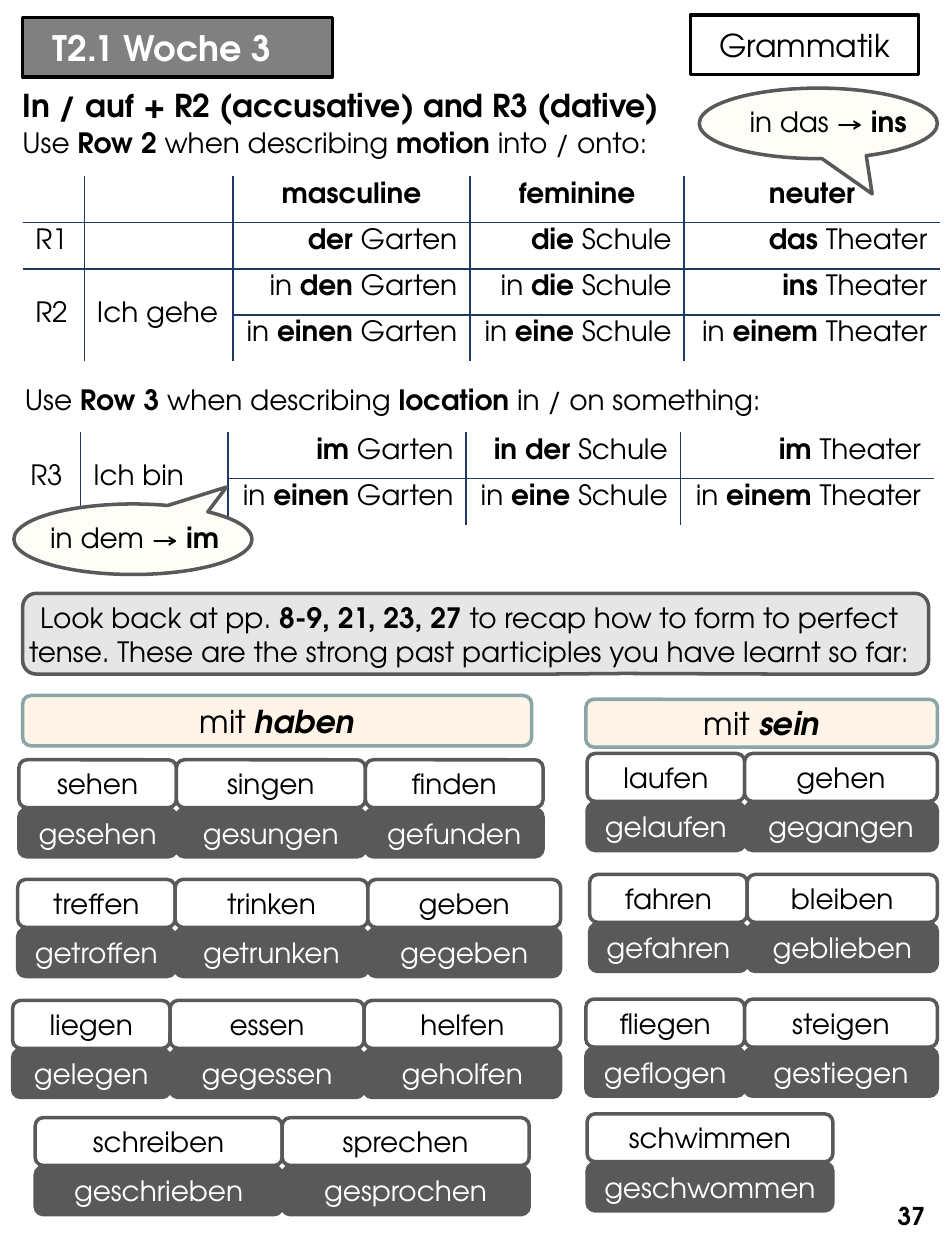
from lxml.etree import SubElement
from pptx import Presentation
from pptx.dml.color import RGBColor
from pptx.enum.shapes import MSO_SHAPE
from pptx.enum.text import MSO_ANCHOR, PP_ALIGN
from pptx.oxml.ns import qn
from pptx.util import Inches, Pt

FONT = "TeX Gyre Adventor"
BLACK, WHITE, DARK, NAVY = "000000", "FFFFFF", "595959", "203864"
CREAM, PEACH, TEAL = "FFFDF7", "FFF4E7", "8AA6A8"
LEFT, CENTER, RIGHT = PP_ALIGN.LEFT, PP_ALIGN.CENTER, PP_ALIGN.RIGHT
NO_GRID = "{2D5ABB26-0587-4C30-8999-92F81FD0307C}"
ROW_H, CARD_H, CARD_STEP = 0.367, 0.38, 0.39

# Text between asterisks is bold.
# left, top, width, height, text, size, alignment
TEXTS = [
    (5.69, 9.48, 1.75, 0.4, "*37*", 14, RIGHT),
    (0.08, 0.63, 7.11, 0.4, "*In / auf + R2 (accusative) and R3 (dative)*", 18, LEFT),
    (0.08, 4.72, 7.29, 0.64, "Look back at pp. *8-9, 21, 23, 27 *to recap how to form to perfect "
     "tense. These are the strong past participles you have learnt so far:", 16, CENTER),
    (0.08, 0.95, 7.36, 0.37, "Use *Row 2 *when describing *motion *into / onto:", 16, LEFT),
    (0.1, 2.99, 7.36, 0.37, "Use *Row 3 *when describing *location *in / on something:", 16, LEFT),
]
# left, top, pointer adjustments, text left, text
BUBBLES = [
    (0.11, 4, (0.393, -0.74), 0.3, "in dem → *im*"),
    (5.55, 0.7, (0.226, 0.999), 5.85, "in das → *ins*"),
]
# left, top, column widths, number of rows above the merged pair, cells
TABLES = [
    (0.18, 1.4, (0.49, 1.18, 1.88, 1.7, 2.03), 2, [
        ("", "", "*masculine*", "*feminine*", "*neuter*"),
        ("R1", "", "*der* Garten", "*die* Schule", "*das *Theater"),
        ("R2", "Ich gehe", "in *den* Garten", "in *die* Schule", "*ins *Theater"),
        ("", "", "in *einen* Garten", "in *eine* Schule", "in *einem *Theater"),
    ]),
    (0.14, 3.43, (0.5, 1.17, 1.89, 1.7, 2.01), 0, [
        ("R3", "Ich bin", "*im* Garten", "*in der* Schule", "*im *Theater"),
        ("", "", "in *einen* Garten", "in *eine* Schule", "in *einem *Theater"),
    ]),
]
# left, top, width, height, text
HEADINGS = [(0.18, 5.52, 4.04, 0.4, "mit *haben*"), (4.65, 5.55, 2.79, 0.38, "mit *sein*")]
# left, top, then (width, infinitive, participle) for each card, side by side
VERB_ROWS = [
    (0.15, 6.03, [(1.25, "sehen", "gesehen"), (1.5, "singen", "gesungen"),
                  (1.41, "finden", "gefunden")]),
    (0.14, 6.98, [(1.25, "treffen", "getroffen"), (1.53, "trinken", "getrunken"),
                  (1.53, "geben", "gegeben")]),
    (0.1, 7.94, [(1.25, "liegen", "gelegen"), (1.54, "essen", "gegessen"),
                 (1.56, "helfen", "geholfen")]),
    (0.28, 8.87, [(1.96, "schreiben", "geschrieben"), (1.96, "sprechen", "gesprochen")]),
    (4.66, 5.98, [(1.25, "laufen", "gelaufen"), (1.53, "gehen", "gegangen")]),
    (4.68, 6.94, [(1.25, "fahren", "gefahren"), (1.51, "bleiben", "geblieben")]),
    (4.65, 7.93, [(1.26, "fliegen", "geflogen"), (1.53, "steigen", "gestiegen")]),
    (4.66, 8.84, [(1.95, "schwimmen", "geschwommen")]),
]


def rgb(color):
    return RGBColor.from_string(color)


def write(tf, text, size=16, color=BLACK, align=LEFT, italic=False):
    """Fill a text frame; parts between asterisks are bold, and italic on request."""
    p = tf.paragraphs[0]
    p.alignment = align
    p.font.size = Pt(size)
    for i, part in enumerate(text.split("*")):
        if part:
            r = p.add_run()
            r.text = part
            bold = i % 2 == 1
            fmt = {"name": FONT, "size": Pt(size), "bold": bold, "italic": bold and italic}
            for name, value in fmt.items():
                setattr(r.font, name, value)
            r.font.color.rgb = rgb(color)


def add_text(s, x, y, w, h, text, size=16, align=LEFT, color=BLACK, anchor=MSO_ANCHOR.TOP):
    tf = s.shapes.add_textbox(*map(Inches, (x, y, w, h))).text_frame
    tf.word_wrap = True
    tf.vertical_anchor = anchor
    write(tf, text, size, color, align)


def add_box(s, kind, x, y, w, h, fill, line, text="", size=16, color=BLACK, adj=(), italic=False):
    sp = s.shapes.add_shape(kind, *map(Inches, (x, y, w, h)))
    sp.shadow.inherit = False
    sp.fill.solid()
    sp.fill.fore_color.rgb = rgb(fill)
    sp.line.color.rgb = rgb(line)
    sp.line.width = Pt(2)
    for i, value in enumerate(adj):
        sp.adjustments[i] = value
    tf = sp.text_frame
    tf.margin_left = tf.margin_right = Inches(0.05)
    tf.vertical_anchor = MSO_ANCHOR.MIDDLE
    write(tf, text, size, color, CENTER, italic)


def set_borders(cell, sides):
    tc_pr = cell._tc.get_or_add_tcPr()
    for side in "LRTB":
        ln = SubElement(tc_pr, qn("a:ln" + side), w=str(Pt(1)))
        if side in sides:
            SubElement(SubElement(ln, qn("a:solidFill")), qn("a:srgbClr"), val=NAVY)
        else:
            SubElement(ln, qn("a:noFill"))


def add_grid(s, x, y, widths, pair, rows):
    """Table ruled only between cells; the first two columns merge the last two rows."""
    n, m = len(rows), len(widths)
    frame = s.shapes.add_table(n, m, *map(Inches, (x, y, sum(widths), n * ROW_H)))
    tbl = frame.table
    tbl.first_row = tbl.horz_banding = False
    tbl._tbl.tblPr.find(qn("a:tableStyleId")).text = NO_GRID
    for col, w in zip(tbl.columns, widths):
        col.width = Inches(w)
    for c in (0, 1):
        tbl.cell(pair, c).merge(tbl.cell(pair + 1, c))
    for i, row in enumerate(rows):
        tbl.rows[i].height = Inches(ROW_H)
        for j, text in enumerate(row):
            cell = tbl.cell(i, j)
            merged = j < 2
            shown = {"L": j > 0, "R": j < m - 1,
                     "T": i > 0 and not (merged and i == pair + 1),
                     "B": i < n - 1 and not (merged and i == pair)}
            set_borders(cell, [side for side, on in shown.items() if on])
            cell.fill.background()
            if merged and i == pair:
                cell.vertical_anchor = MSO_ANCHOR.MIDDLE
            heading = text.startswith("*") and text.endswith("*")
            write(cell.text_frame, text, align=LEFT if merged else CENTER if heading else RIGHT)


def main():
    prs = Presentation()
    prs.slide_width, prs.slide_height = Inches(7.5), Inches(10)
    s = prs.slides.add_slide(prs.slide_layouts[6])

    add_box(s, MSO_SHAPE.ROUNDED_RECTANGULAR_CALLOUT, 0.18, 4.71, 7.19, 0.64, "E6E6E6", DARK,
            adj=(0.164, 0.493, 0.167))
    add_box(s, MSO_SHAPE.RECTANGLE, 0.18, 0.14, 2.46, 0.47, "808080", BLACK)
    add_text(s, 0.32, 0.11, 2.32, 0.53, "*T2.1 Woche 3*", 20, color=WHITE,
             anchor=MSO_ANCHOR.MIDDLE)
    add_box(s, MSO_SHAPE.RECTANGLE, 5.48, 0.12, 1.81, 0.47, WHITE, BLACK, "Grammatik", 18)
    for item in TEXTS:
        add_text(s, *item)
    for item in TABLES:
        add_grid(s, *item)
    for x, y, adj, text_x, text in BUBBLES:
        add_box(s, MSO_SHAPE.OVAL_CALLOUT, x, y, 1.89, 0.56, CREAM, DARK, adj=adj)
        add_text(s, text_x, y + 0.08, 1.89, 0.37, text)

    card = MSO_SHAPE.ROUNDED_RECTANGLE
    for x, y, w, h, text in HEADINGS:
        add_box(s, card, x, y, w, h, PEACH, TEAL, text, 18, italic=True)
    for x, y, verbs in VERB_ROWS:
        for w, infinitive, participle in verbs:
            add_box(s, card, x, y, w, CARD_H, WHITE, DARK, infinitive)
            add_box(s, card, x, y + CARD_STEP, w, CARD_H, DARK, DARK, participle, color=WHITE)
            x += w
    prs.save("out.pptx")


if __name__ == "__main__":
    main()
